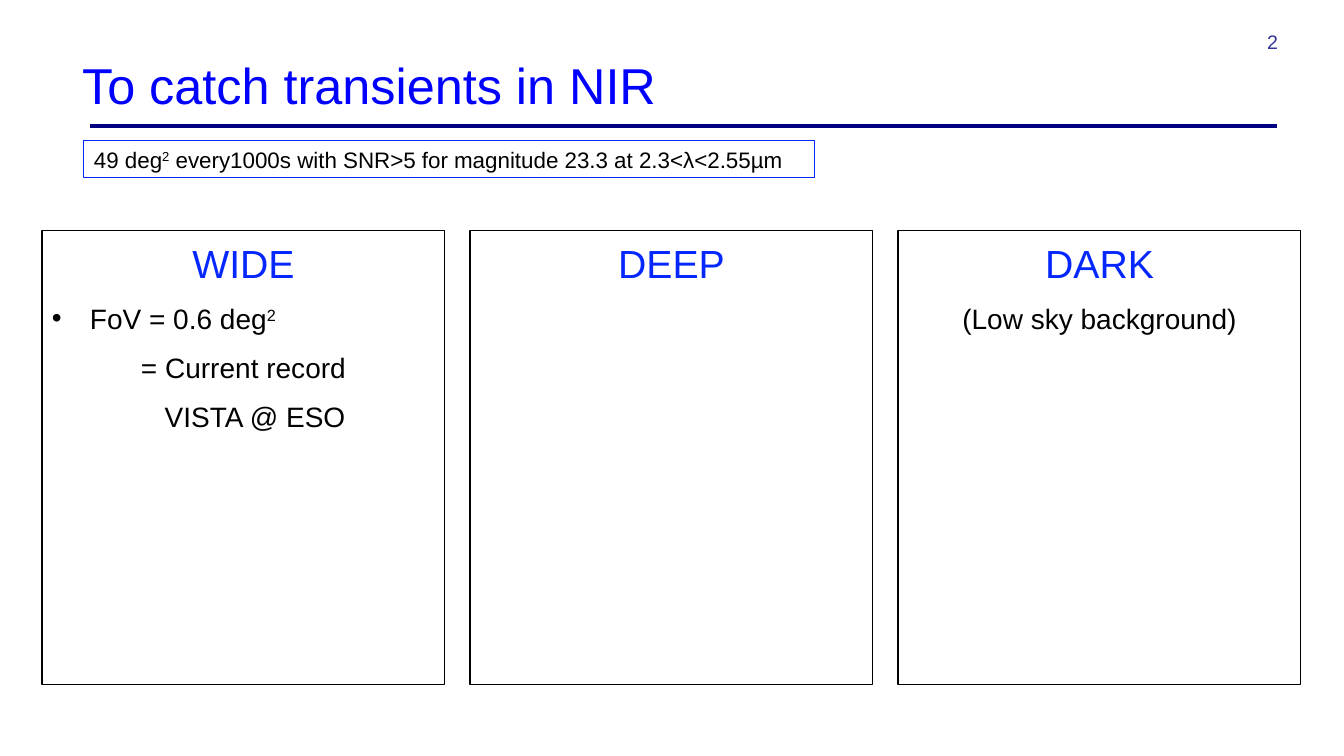
"""Build the slide on catching transients in the near infrared."""
from lxml.etree import SubElement
from pptx import Presentation
from pptx.dml.color import RGBColor
from pptx.enum.shapes import MSO_CONNECTOR, MSO_SHAPE
from pptx.enum.text import MSO_ANCHOR, MSO_AUTO_SIZE, PP_ALIGN
from pptx.oxml.ns import qn
from pptx.util import Emu, Pt

BLUE = RGBColor(0x00, 0x00, 0xFF)
HEADING_BLUE = RGBColor(0x05, 0x27, 0xFF)
NAVY = RGBColor(0x00, 0x00, 0x80)
INDIGO = RGBColor(0x33, 0x33, 0x99)
BLACK = RGBColor(0x00, 0x00, 0x00)
FONT = "Arial"
EMU_PER_PX = 914400 / 100.8

TITLE = "To catch transients in NIR"
PAGE_NUMBER = "2"
REQUIREMENT = [("49 deg", False), ("2", True),
               (" every1000s with SNR>5 for magnitude 23.3 at 2.3<λ<2.55µm", False)]
COLUMNS = [
    ("WIDE", [
        {"runs": [("FoV = 0.6 deg", False), ("2", True)], "bullet": True},
        {"runs": [("= Current record", False)]},
        {"runs": [("VISTA @ ESO", False)], "indent": 23},
    ]),
    ("DEEP", []),
    ("DARK", [{"runs": [("(Low sky background)", False)]}]),
]
COLUMN_LEFT, COLUMN_TOP, COLUMN_WIDTH, COLUMN_HEIGHT, COLUMN_GAP = 42, 231, 403, 454, 25
BULLET_INDENT = 38


def px(length):
    return Emu(round(length * EMU_PER_PX))


def add_runs(paragraph, runs, size, color, align=PP_ALIGN.LEFT):
    paragraph.alignment = align
    for text, raised in runs:
        run = paragraph.add_run()
        run.text = text
        run.font.name = FONT
        run.font.size = Pt(size)
        run.font.color.rgb = color
        if raised:
            run._r.get_or_add_rPr().set("baseline", "30000")


def set_indent(paragraph, left, first=0):
    properties = paragraph._p.get_or_add_pPr()
    properties.set("marL", str(px(left)))
    properties.set("indent", str(px(first)))
    return properties


def add_frame(slide, left, top, width, height, color):
    frame = slide.shapes.add_shape(MSO_SHAPE.RECTANGLE, px(left), px(top), px(width), px(height))
    frame.shadow.inherit = False
    frame.fill.background()
    frame.line.color.rgb = color
    frame.line.width = Pt(0.75)
    frame.text_frame.word_wrap = True
    frame.text_frame.vertical_anchor = MSO_ANCHOR.TOP
    return frame.text_frame


def add_column(slide, left, heading, details):
    body = add_frame(slide, left, COLUMN_TOP, COLUMN_WIDTH, COLUMN_HEIGHT, BLACK)
    body.margin_top = px(8)
    add_runs(body.paragraphs[0], [(heading, False)], 28, HEADING_BLUE, PP_ALIGN.CENTER)
    for detail in details:
        paragraph = body.add_paragraph()
        paragraph.space_before = Pt(11)
        align = PP_ALIGN.CENTER
        if detail.get("bullet"):
            align = PP_ALIGN.LEFT
            properties = set_indent(paragraph, BULLET_INDENT, -BULLET_INDENT)
            SubElement(properties, qn("a:buFont")).set("typeface", FONT)
            SubElement(properties, qn("a:buChar")).set("char", "•")
        elif "indent" in detail:
            set_indent(paragraph, detail["indent"])
        add_runs(paragraph, detail["runs"], 20, BLACK, align)


def main():
    deck = Presentation()
    deck.slide_width, deck.slide_height = px(1344), px(756)
    slide = deck.slides.add_slide(deck.slide_layouts[5])

    title = slide.shapes.title
    title.left, title.top, title.width, title.height = px(72), px(42), px(1221), px(84)
    title.text_frame.auto_size = MSO_AUTO_SIZE.NONE
    title.text_frame.vertical_anchor = MSO_ANCHOR.MIDDLE
    add_runs(title.text_frame.paragraphs[0], [(TITLE, False)], 36, BLUE)

    rule = slide.shapes.add_connector(MSO_CONNECTOR.STRAIGHT, px(90), px(126), px(1277), px(126))
    rule.line.color.rgb = NAVY
    rule.line.width = Pt(2.5)
    SubElement(rule._element.spPr, qn("a:effectLst"))

    requirement = add_frame(slide, 84, 141, 731, 37, HEADING_BLUE)
    add_runs(requirement.paragraphs[0], REQUIREMENT, 16, BLACK)

    for index, (heading, details) in enumerate(COLUMNS):
        add_column(slide, COLUMN_LEFT + index * (COLUMN_WIDTH + COLUMN_GAP), heading, details)

    page_number = slide.shapes.add_textbox(px(1008), px(25), px(280), px(42)).text_frame
    page_number.word_wrap = True
    add_runs(page_number.paragraphs[0], [(PAGE_NUMBER, False)], 14, INDIGO, PP_ALIGN.RIGHT)

    deck.save("out.pptx")


if __name__ == "__main__":
    main()
